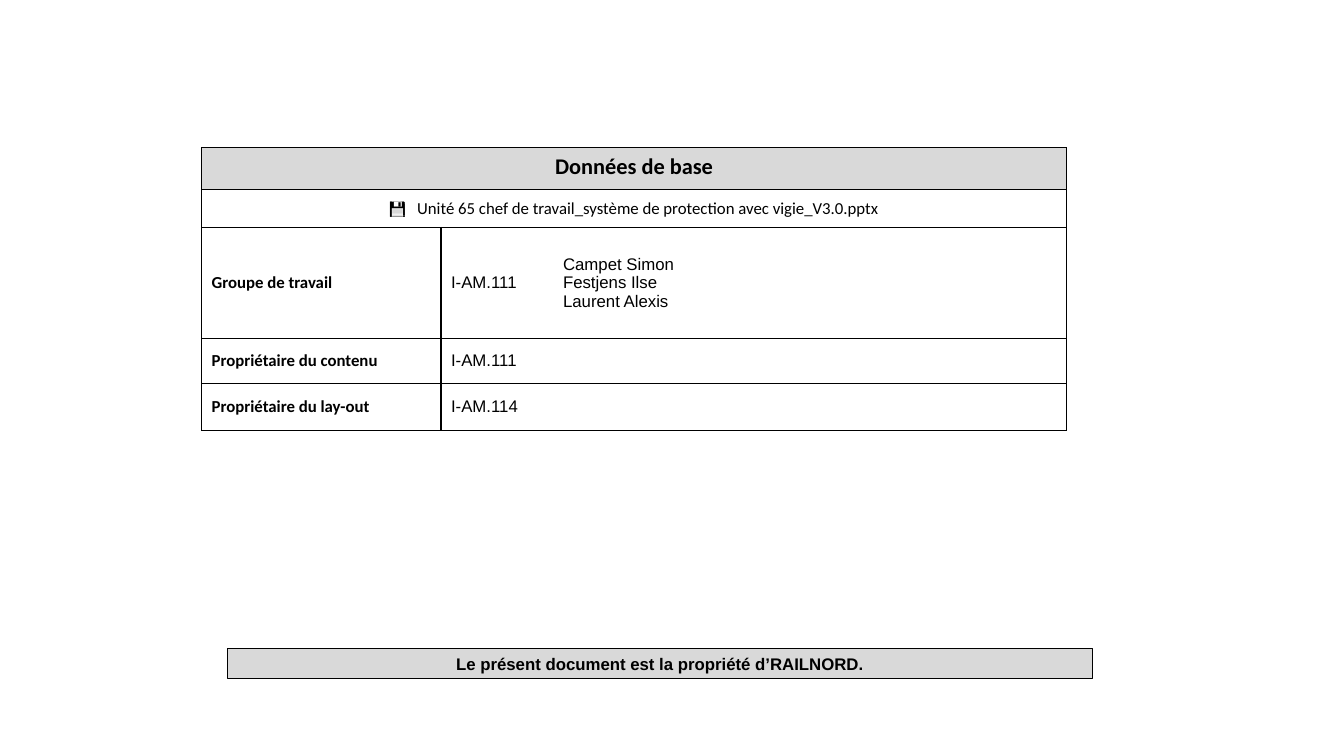
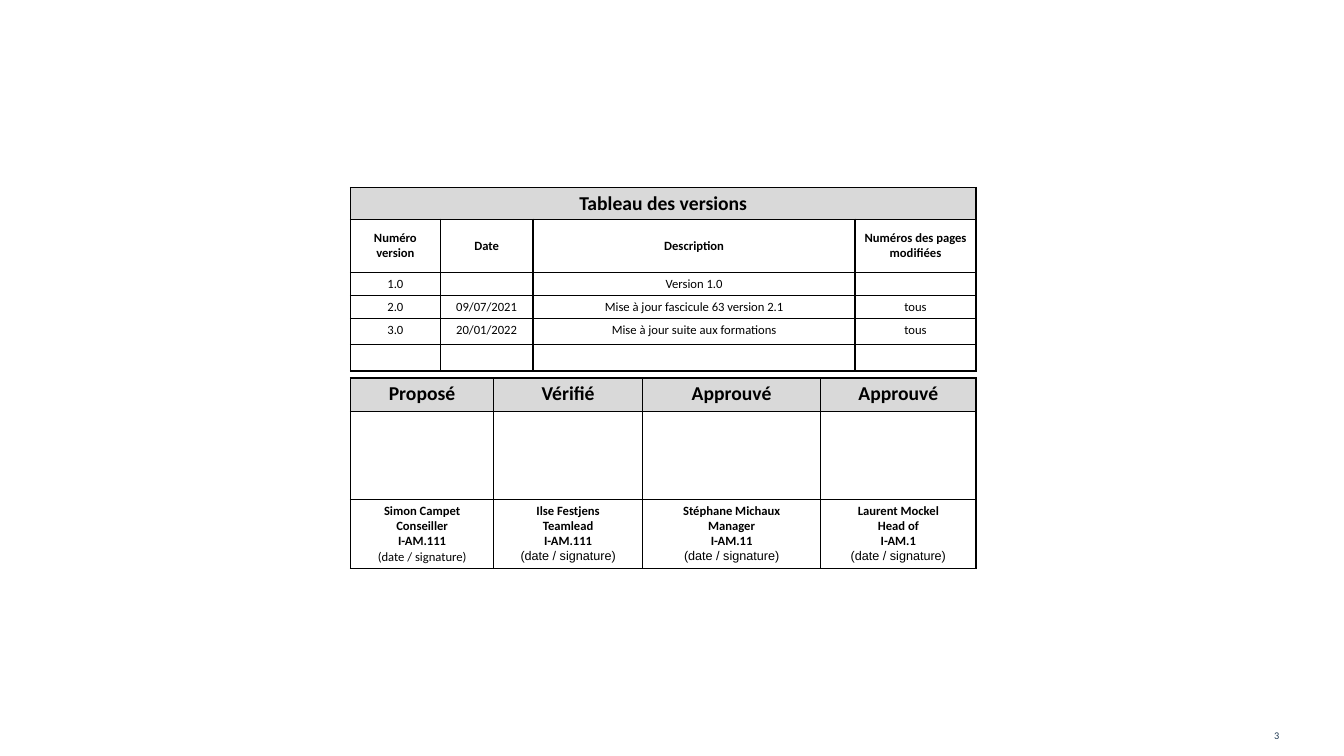
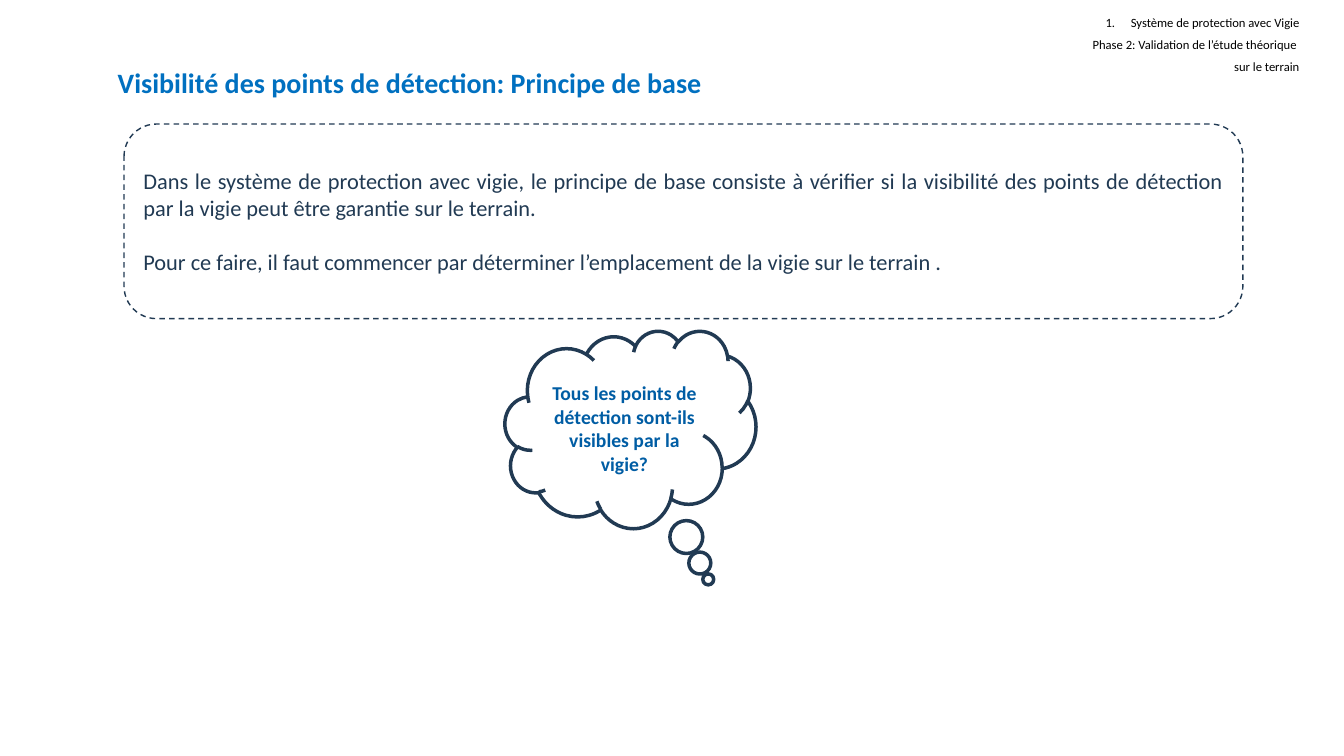
"""Build three slides: document data, version history and a visibility principle."""
import dataclasses

import pptx
import pptx.dml.color
import pptx.enum.dml
import pptx.enum.shapes
import pptx.enum.text
import pptx.oxml.ns
import pptx.util
from lxml import etree

Pt = pptx.util.Pt
qn = pptx.oxml.ns.qn
Align = pptx.enum.text.PP_ALIGN
Anchor = pptx.enum.text.MSO_ANCHOR
Shape = pptx.enum.shapes.MSO_SHAPE


@dataclasses.dataclass(frozen=True)
class Theme:
    black: str = "000000"
    white: str = "FFFFFF"
    band: str = "D9D9D9"
    navy: str = "213A53"
    title: str = "0070C0"
    question: str = "005DA4"
    font: str = "Calibri"
    label_font: str = "Arial"
    title_size: float = 20
    lead_size: float = 16
    heading_size: float = 14
    text_size: float = 12
    small_size: float = 9
    number_size: float = 7.3


THEME = Theme()


def rgb(color):
    return pptx.dml.color.RGBColor.from_string(color)


def write(frame, text, *, size=THEME.text_size, font=THEME.font, color=THEME.black,
          bold=False, align=Align.LEFT, before=None, after=None, leading=None,
          tracking=None, para=None):
    if para is None:
        para = frame.paragraphs[0]
        if para.runs:
            para = frame.add_paragraph()
        para.alignment = align
        para.line_spacing = leading
        para.space_before = before
        para.space_after = after
    span = para.add_run()
    span.text = text
    span.font.size = Pt(size)
    span.font.name = font
    span.font.bold = bold
    span.font.color.rgb = rgb(color)
    if tracking:
        span.font._element.set("spc", str(tracking))
    return para


def add_text_box(page, box, anchor=Anchor.TOP):
    frame = page.shapes.add_textbox(*map(Pt, box)).text_frame
    frame.word_wrap = True
    frame.vertical_anchor = anchor
    return frame


def add_outline(page, kind, box, color, width, fill=None):
    shape = page.shapes.add_shape(kind, *map(Pt, box))
    shape.shadow.inherit = False
    shape.line.color.rgb = rgb(color)
    shape.line.width = Pt(width)
    if fill:
        shape.fill.solid()
        shape.fill.fore_color.rgb = rgb(fill)
    else:
        shape.fill.background()
    shape.text_frame.word_wrap = True
    shape.text_frame.vertical_anchor = Anchor.MIDDLE
    return shape


def set_borders(cell, hidden=""):
    properties = cell._tc.get_or_add_tcPr()
    for side in "LRTB":
        line = etree.SubElement(properties, qn(f"a:ln{side}"), w=str(Pt(1)))
        if side in hidden:
            etree.SubElement(line, qn("a:noFill"))
        else:
            paint = etree.SubElement(line, qn("a:solidFill"))
            etree.SubElement(paint, qn("a:srgbClr"), val=THEME.black)


def add_grid(page, box, columns, rows, inset=(7.2, 3.6), band_rows=(0,), hidden=None):
    left, top = box
    table = page.shapes.add_table(len(rows), len(columns), Pt(left), Pt(top),
                                  Pt(sum(columns)), Pt(sum(rows))).table
    table.first_row = table.horz_banding = False
    for column, width in zip(table.columns, columns):
        column.width = Pt(width)
    for row_index, (row, height) in enumerate(zip(table.rows, rows)):
        row.height = Pt(height)
        for column_index, cell in enumerate(row.cells):
            set_borders(cell, (hidden or {}).get((row_index, column_index), ""))
            cell.fill.solid()
            banded = row_index in band_rows
            cell.fill.fore_color.rgb = rgb(THEME.band if banded else THEME.white)
            cell.margin_left = cell.margin_right = Pt(inset[0])
            cell.margin_top = cell.margin_bottom = Pt(inset[1])
    return table


def fill_cell(cell, *lines, anchor=Anchor.MIDDLE, **style):
    cell.vertical_anchor = anchor
    for line in lines:
        if line:
            write(cell.text_frame, line, **style)
        else:
            etree.SubElement(cell.text_frame.paragraphs[0]._p, qn("a:endParaRPr"),
                             sz=str(THEME.small_size * 100))


def add_base_data(page, box):
    table = add_grid(page, box, (171, 80, 257, 110), (30, 27, 79.2, 32.2, 33.6),
                     hidden={(2, 1): "R", (2, 2): "L"})
    for row, first, last in ((0, 0, 3), (1, 0, 3), (2, 2, 3), (3, 1, 3), (4, 1, 3)):
        table.cell(row, first).merge(table.cell(row, last))
    fill_cell(table.cell(0, 0), "Données de base", anchor=Anchor.TOP,
              size=THEME.lead_size, bold=True, align=Align.CENTER)
    file_cell = table.cell(1, 0)
    file_cell.vertical_anchor = Anchor.MIDDLE
    para = write(file_cell.text_frame, "💾", align=Align.CENTER)
    write(file_cell.text_frame, " ", tracking=540, para=para)
    write(file_cell.text_frame,
          "Unité 65 chef de travail_système de protection avec vigie_V3.0.pptx", para=para)
    entries = (("Groupe de travail", "I-AM.111"),
               ("Propriétaire du contenu", "I-AM.111"),
               ("Propriétaire du lay-out", "I-AM.114"))
    for row, (label, unit) in enumerate(entries, start=2):
        fill_cell(table.cell(row, 0), label, bold=True)
        fill_cell(table.cell(row, 1), unit, font=THEME.label_font)
    fill_cell(table.cell(2, 2), "Campet Simon", "Festjens Ilse", "Laurent Alexis",
              font=THEME.label_font)


def add_ownership_notice(page, box):
    notice = add_outline(page, Shape.RECTANGLE, box, THEME.black, 0.75, THEME.band)
    write(notice.text_frame, "Le présent document est la propriété d’RAILNORD.",
          font=THEME.label_font, bold=True, align=Align.CENTER)


def add_versions(page, box):
    table = add_grid(page, box, (64, 66.4, 230, 86.4), (22, 38, 16.6, 16.6, 18.6, 18.6),
                     inset=(5, 2.8))
    table.cell(0, 0).merge(table.cell(0, 3))
    fill_cell(table.cell(0, 0), "Tableau des versions", anchor=Anchor.TOP,
              size=THEME.heading_size, bold=True, align=Align.CENTER)
    entries = (("Numéro version", "Date", "Description", "Numéros des pages modifiées"),
               ("1.0", "", "Version 1.0", ""),
               ("2.0", "09/07/2021", "Mise à jour fascicule 63 version 2.1", "tous"),
               ("3.0", "20/01/2022", "Mise à jour suite aux formations", "tous"),
               ("", "", "", ""))
    for row, entry in enumerate(entries, start=1):
        heading = row == 1
        for column, text in enumerate(entry):
            fill_cell(table.cell(row, column), text, size=THEME.small_size,
                      anchor=Anchor.MIDDLE if heading else Anchor.TOP,
                      bold=heading, align=Align.CENTER)


def add_signatures(page, box):
    table = add_grid(page, box, (102.2, 106.4, 127.2, 111), (23.8, 63, 48.6),
                     inset=(5, 2.8))
    signers = (("Proposé", "Simon Campet", "Conseiller", "I-AM.111", THEME.font),
               ("Vérifié", "Ilse Festjens", "Teamlead", "I-AM.111", THEME.label_font),
               ("Approuvé", "Stéphane Michaux", "Manager", "I-AM.11", THEME.label_font),
               ("Approuvé", "Laurent Mockel", "Head of", "I-AM.1", THEME.label_font))
    for column, (step, name, role, unit, font) in enumerate(signers):
        fill_cell(table.cell(0, column), step, anchor=Anchor.TOP,
                  size=THEME.heading_size, bold=True, align=Align.CENTER)
        fill_cell(table.cell(1, column), "")
        signature = table.cell(2, column)
        fill_cell(signature, name, role, unit, anchor=Anchor.TOP,
                  size=THEME.small_size, bold=True, align=Align.CENTER)
        write(signature.text_frame, "(date / signature)", size=THEME.small_size,
              font=font, align=Align.CENTER)


def add_page_number(page, box, number):
    write(add_text_box(page, box, Anchor.MIDDLE), number,
          size=THEME.number_size, color=THEME.navy)


def add_title(page, box, text):
    write(add_text_box(page, box), text, size=THEME.title_size, color=THEME.title,
          bold=True, leading=0.9)


def add_chapter(page, box):
    frame = add_text_box(page, box)
    for text in ("Système de protection avec Vigie",
                 "Phase 2: Validation de l’étude théorique ",
                 "sur le terrain"):
        write(frame, text, size=THEME.small_size, align=Align.RIGHT, leading=0.9,
              after=Pt(6))
    properties = frame.paragraphs[0]._p.get_or_add_pPr()
    properties.set("marL", str(Pt(18)))
    properties.set("indent", str(-Pt(18)))
    etree.SubElement(properties, qn("a:buAutoNum"), type="arabicPeriod")


def add_principle(page, box):
    panel = add_outline(page, Shape.ROUNDED_RECTANGLE, box, THEME.navy, 1)
    panel.line.dash_style = pptx.enum.dml.MSO_LINE.DASH
    style = dict(size=THEME.lead_size, color=THEME.navy, align=Align.JUSTIFY)
    write(panel.text_frame,
          "Dans le système de protection avec vigie, le principe de base consiste à "
          "vérifier si la visibilité des points de détection par la vigie peut être "
          "garantie sur le terrain.", **style)
    write(panel.text_frame,
          "Pour ce faire, il faut commencer par déterminer l’emplacement de la vigie "
          "sur le terrain .", before=Pt(19.5), **style)


def add_question(page, box):
    left, top, width, height = box
    cloud = add_outline(page, Shape.CLOUD_CALLOUT, box, THEME.navy, 2.5)
    cloud.adjustments[0] = 0.31
    cloud.adjustments[1] = 0.76
    frame = add_text_box(page, (left + 23, top + 32.4, 124.6, 75))
    write(frame, "Tous les points de détection sont-ils visibles par la vigie?",
          size=THEME.heading_size, color=THEME.question, bold=True, align=Align.CENTER)


def main():
    deck = pptx.Presentation()
    deck.slide_width, deck.slide_height = Pt(960), Pt(540)
    data_page, version_page, principle_page = (
        deck.slides.add_slide(deck.slide_layouts[6]) for _ in range(3))

    add_base_data(data_page, (144, 105.6))
    add_ownership_notice(data_page, (162.6, 463, 617.8, 21.6))

    add_versions(version_page, (250.4, 134))
    add_signatures(version_page, (250.4, 270))
    add_page_number(version_page, (903, 511, 44.6, 28.8), "3")

    add_title(principle_page, (77, 46, 635, 70),
              "Visibilité des points de détection: Principe de base")
    add_chapter(principle_page, (710.6, 8.6, 224.6, 28))
    add_principle(principle_page, (88.6, 88.6, 799.2, 139))
    add_question(principle_page, (360.8, 236.2, 179.2, 141))
    deck.save("out.pptx")


if __name__ == "__main__":
    main()
